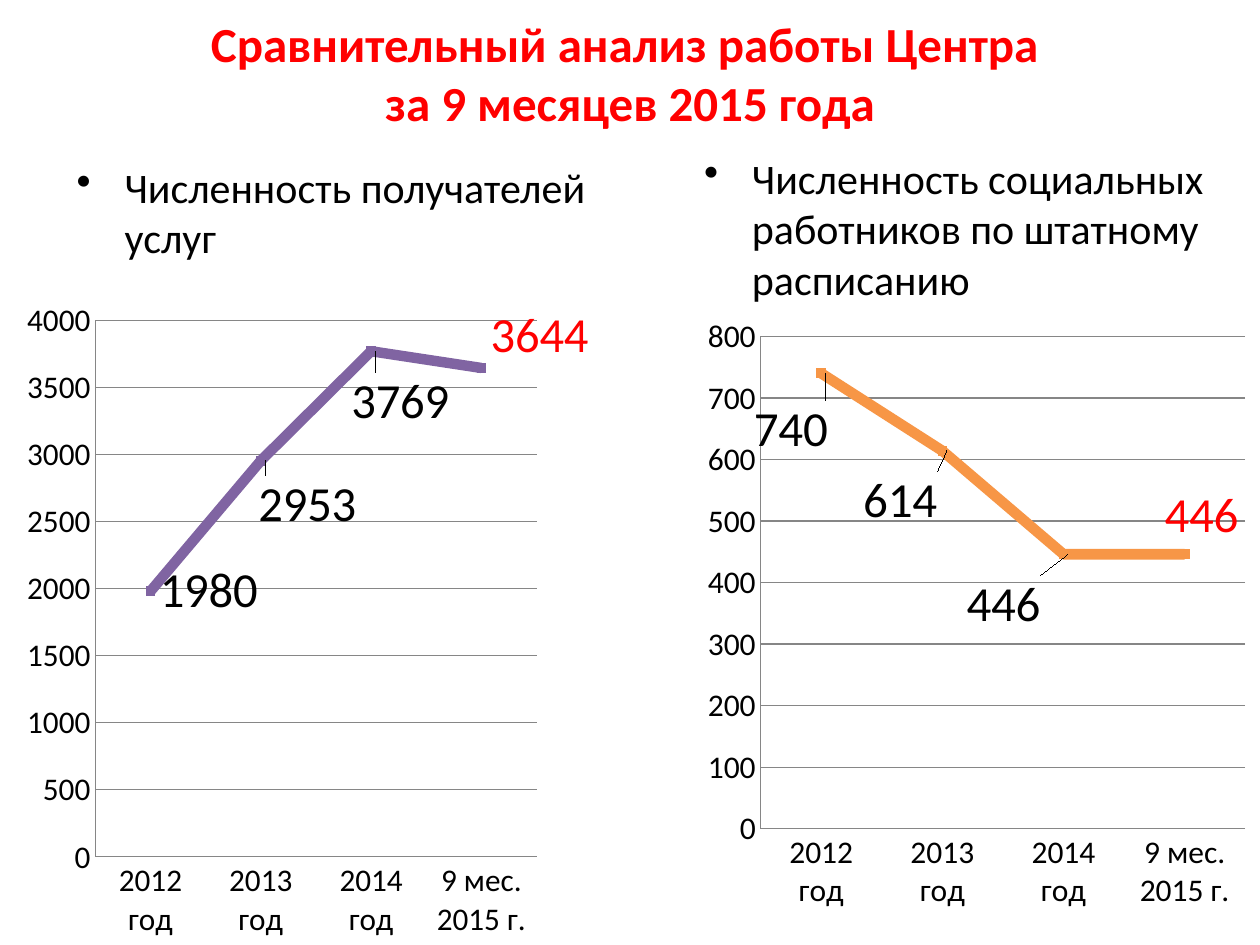
import lxml.etree
import pptx
import pptx.chart.data
import pptx.dml.color
import pptx.enum.chart
import pptx.enum.text
import pptx.oxml
import pptx.oxml.ns
import pptx.util

Inches = pptx.util.Inches
Pt = pptx.util.Pt
qn = pptx.oxml.ns.qn

BLACK = "000000"
RED = "FF0000"
GREY = "868686"
PERIODS = ["2012 год", "2013 год", "2014 год", "9 мес. 2015 г."]


def color(value):
    return pptx.dml.color.RGBColor.from_string(value)


class SlideBuilder:
    font_name = "Calibri"

    def __init__(self, page):
        self.page = page

    def format_font(self, font, size, value=BLACK, bold=False):
        font.name = self.font_name
        font.size = Pt(size)
        font.bold = bold
        font.color.rgb = color(value)

    def title(self, text, left, top, width, height):
        box = self.page.shapes.title
        box.left, box.top = Inches(left), Inches(top)
        box.width, box.height = Inches(width), Inches(height)
        frame = box.text_frame
        frame.text = text
        frame.vertical_anchor = pptx.enum.text.MSO_ANCHOR.MIDDLE
        para = frame.paragraphs[0]
        para.alignment = pptx.enum.text.PP_ALIGN.CENTER
        self.format_font(para.font, 28, RED, True)

    def bullet(self, text, left, top, width, height):
        box = self.page.shapes.add_textbox(
            Inches(left), Inches(top), Inches(width), Inches(height))
        frame = box.text_frame
        frame.word_wrap = True
        para = frame.paragraphs[0]
        para.text = text
        para.space_before = Pt(4.8)
        self.format_font(para.font, 24)
        properties = para._p.get_or_add_pPr()
        properties.set("marL", str(Inches(0.38)))
        properties.set("indent", str(-Inches(0.38)))
        mark = lxml.etree.Element(qn("a:buChar"), char="•")
        properties.insert_element_before(mark, "a:tabLst", "a:defRPr", "a:extLst")

    def manual_layout(self, parent, index, inner=False, **fractions):
        for old in parent.findall(qn("c:layout")):
            parent.remove(old)
        layout = lxml.etree.Element(qn("c:layout"))
        manual = lxml.etree.SubElement(layout, qn("c:manualLayout"))
        settings = dict(fractions)
        if inner:
            settings = {"layoutTarget": "inner", "xMode": "edge",
                        "yMode": "edge", **fractions}
        for name, value in settings.items():
            lxml.etree.SubElement(manual, qn("c:" + name), val=str(value))
        parent.insert(index, layout)

    def axis(self, axis):
        axis.major_tick_mark = pptx.enum.chart.XL_TICK_MARK.NONE
        axis.minor_tick_mark = pptx.enum.chart.XL_TICK_MARK.NONE
        self.line(axis.format.line, GREY, 0.75)

    def line(self, line, value, width):
        line.color.rgb = color(value)
        line.width = Pt(width)

    def line_chart(self, values, value_color, position, plot, top, step, offsets):
        data = pptx.chart.data.CategoryChartData()
        data.categories = PERIODS
        data.add_series("Series 1", values)
        chart = self.page.shapes.add_chart(
            pptx.enum.chart.XL_CHART_TYPE.LINE_MARKERS,
            *map(Inches, position), data).chart
        chart.has_legend = False
        chart.has_title = False
        self.format_font(chart.font, 18)
        x, y, w, h = plot
        self.manual_layout(chart._chartSpace.chart.plotArea, 0, True,
                           x=x, y=y, w=w, h=h)
        self.axis(chart.category_axis)
        self.axis(chart.value_axis)
        chart.value_axis.minimum_scale = 0
        chart.value_axis.maximum_scale = top
        chart.value_axis.major_unit = step
        chart.value_axis.has_major_gridlines = True
        self.line(chart.value_axis.major_gridlines.format.line, GREY, 0.75)

        chart.plots[0].vary_by_categories = False
        series = chart.plots[0].series[0]
        series.smooth = False
        self.line(series.format.line, value_color, 6)
        series.marker.style = pptx.enum.chart.XL_MARKER_STYLE.SQUARE
        series.marker.size = 5
        series.marker.format.fill.solid()
        series.marker.format.fill.fore_color.rgb = color(value_color)
        self.line(series.marker.format.line, value_color, 0.75)

        series.data_labels.show_value = True
        self.format_font(series.data_labels.font, 28)
        last = len(values) - 1
        for index, (dx, dy) in enumerate(offsets):
            label = series.points[index].data_label
            self.format_font(label.font, 28, RED if index == last else BLACK)
            label.position = pptx.enum.chart.XL_LABEL_POSITION.RIGHT
            element = series.data_labels._element.findall(qn("c:dLbl"))[index]
            self.manual_layout(element, 1, x=dx, y=dy)


def main():
    deck = pptx.Presentation()
    deck.slide_width, deck.slide_height = Inches(10), Inches(7.5)
    builder = SlideBuilder(deck.slides.add_slide(deck.slide_layouts[5]))
    builder.title("Сравнительный анализ работы Центра \vза 9 месяцев 2015 года",
                  0, 0, 10, 1.15)
    builder.line_chart(
        [1980, 2953, 3769, 3644], "8064A2", (0.02, 2.39, 4.65, 5.07),
        (0.16, 0.03, 0.76, 0.84), 4000, 500,
        [(0, 0), (-0.02, 0.07), (-0.05, 0.08), (0, -0.05)])
    builder.line_chart(
        [740, 614, 446, 446], "F79646", (5.24, 2.47, 4.69, 5.01),
        (0.17, 0.04, 0.82, 0.78), 800, 100,
        [(-0.13, 0.09), (-0.15, 0.08), (-0.18, 0.08), (-0.05, -0.06)])
    builder.bullet("Численность получателей услуг", 0.51, 1.23, 4.61, 1.09)
    builder.bullet("Численность социальных работников по штатному расписанию",
                   5.49, 1.16, 4.5, 1.23)
    deck.save("out.pptx")


if __name__ == "__main__":
    main()
